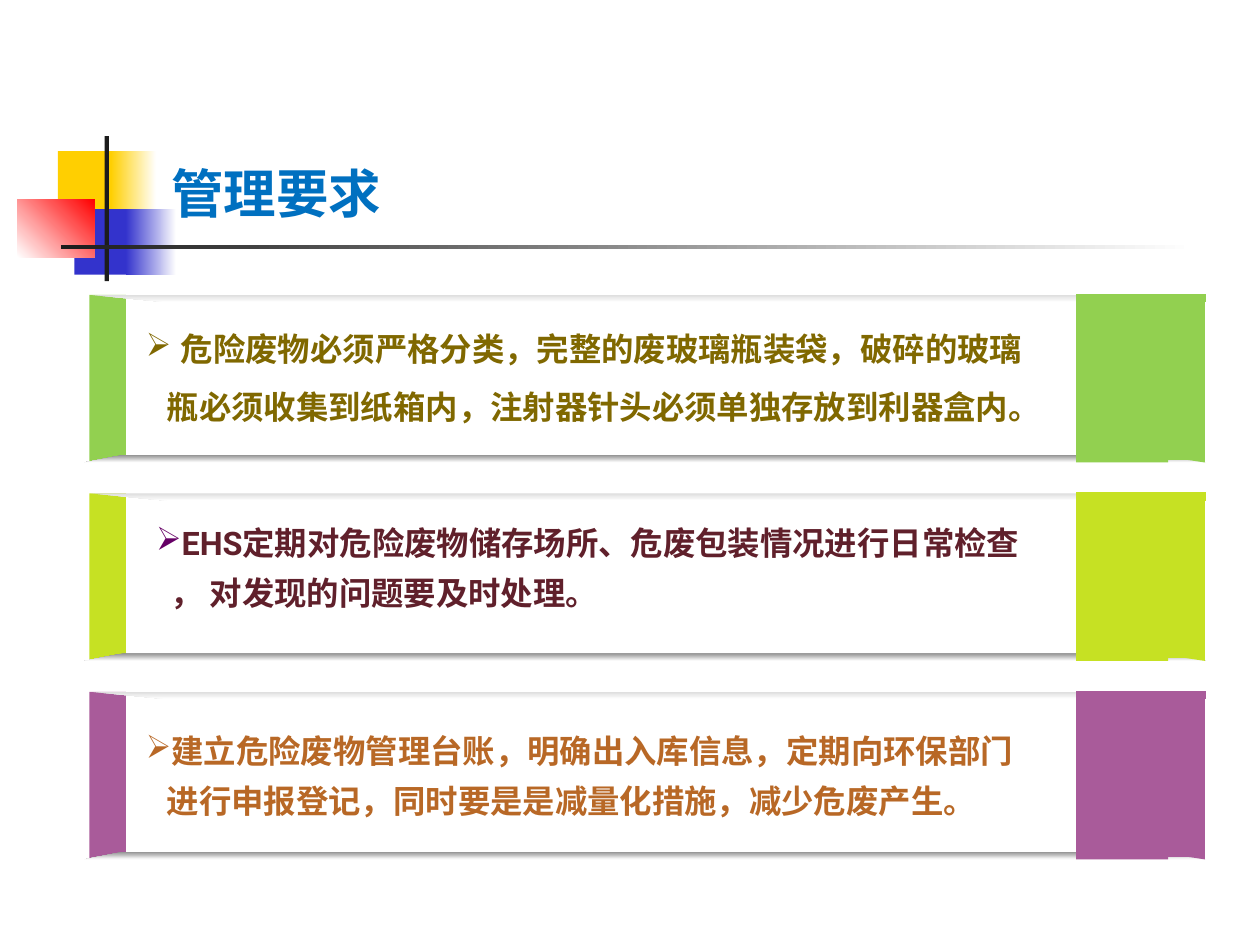
"""Build the slide of management requirements for hazardous waste."""
from lxml.etree import SubElement
from pptx import Presentation
from pptx.dml.color import RGBColor
from pptx.enum.shapes import MSO_SHAPE as Shape
from pptx.enum.text import MSO_ANCHOR as Anchor
from pptx.oxml.ns import qn
from pptx.util import Pt

WHITE = RGBColor(0xFF, 0xFF, 0xFF)
BLACK = RGBColor(0x1C, 0x1C, 0x1C)
YELLOW = RGBColor(0xFF, 0xCF, 0x01)
BLUE = RGBColor(0x33, 0x33, 0xCC)
RED = RGBColor(0xFF, 0x00, 0x00)
TITLE_BLUE = RGBColor(0x00, 0x70, 0xC0)
LIGHT_GREY = RGBColor(0xDD, 0xDD, 0xDD)
GREY = RGBColor(0x8E, 0x8E, 0x8E)
GREEN = RGBColor(0x92, 0xD0, 0x50)
LIME = RGBColor(0xC6, 0xE1, 0x23)
PURPLE = RGBColor(0xA9, 0x5B, 0x9A)
OLIVE = RGBColor(0x80, 0x68, 0x00)
MAROON = RGBColor(0x60, 0x20, 0x2B)
ORANGE = RGBColor(0xB8, 0x68, 0x26)
VIOLET = RGBColor(0x66, 0x00, 0x66)

FIRST_TOP, PITCH = 168.5, 113.4

CARDS = [
    dict(colour=GREEN, panel_top=168.5, text_at=(76.3, 167.8, 532.8, 85),
         lines=["危险废物必须严格分类，完整的废玻璃瓶装袋，破碎的玻璃",
                "瓶必须收集到纸箱内，注射器针头必须单独存放到利器盒内。"],
         style=dict(colour=OLIVE, spacing=1.5, hang=20, indent=12)),
    dict(colour=LIME, panel_top=275.8, text_at=(82.1, 287.3, 532.8, 67.7),
         lines=["EHS定期对危险废物储存场所、危废包装情况进行日常检查",
                "， 对发现的问题要及时处理。"],
         style=dict(colour=MAROON, spacing=1.3, indent=8, bullet_colour=VIOLET)),
    dict(colour=PURPLE, panel_top=388.8, text_at=(76.3, 406.1, 532.8, 67.7),
         lines=["建立危险废物管理台账，明确出入库信息，定期向环保部门",
                "进行申报登记，同时要是是减量化措施，减少危废产生。"],
         style=dict(colour=ORANGE, spacing=1.3, indent=12)),
]


def add_bullet(para, colour=None, hang=0):
    """Give a paragraph an arrow bullet."""
    props = para._p.get_or_add_pPr()
    props.set("marL", str(Pt(hang)))
    props.set("indent", str(-Pt(hang)))
    if colour is not None:
        holder = SubElement(props, qn("a:buClr"))
        SubElement(holder, qn("a:srgbClr")).set("val", str(colour))
    SubElement(props, qn("a:buChar")).set("char", "➢")


def write(para, text, *, font, size, colour, spacing=None):
    """Add bold text to a paragraph."""
    if spacing:
        para.line_spacing = spacing
    span = para.add_run()
    span.text = text
    span.font.name = font
    span.font.size = Pt(size)
    span.font.bold = True
    span.font.color.rgb = colour


class Painter:
    """Holds the text style and the current page."""

    def __init__(self, page, font="Roboto", title_size=30, body_size=18.5):
        self.page = page
        self.font = font
        self.title_size = title_size
        self.body_size = body_size

    def paint(self, shape, start, end=None, angle=0):
        """Fill a shape with one colour or a clockwise gradient."""
        shape.shadow.inherit = False
        shape.line.fill.background()
        if end is None:
            shape.fill.solid()
            shape.fill.fore_color.rgb = start
            return
        shape.fill.gradient()
        shape.fill.gradient_angle = -angle % 360
        for stop, colour in zip(shape.fill.gradient_stops, (start, end)):
            stop.color.rgb = colour

    def rectangle(self, at, *colours, angle=0):
        """Draw a rectangle."""
        shape = self.page.shapes.add_shape(Shape.RECTANGLE, *map(Pt, at))
        self.paint(shape, *colours, angle=angle)

    def polygon(self, top, points, *colours, angle=0):
        """Draw a closed outline whose heights are counted from top."""
        corners = [(Pt(x), Pt(top + y)) for x, y in points]
        builder = self.page.shapes.build_freeform(*corners[0], scale=1.0)
        builder.add_line_segments(corners[1:], close=True)
        self.paint(builder.convert_to_shape(), *colours, angle=angle)

    def text_box(self, at, anchor):
        """Add an empty wrapping text box and return its frame."""
        frame = self.page.shapes.add_textbox(*map(Pt, at)).text_frame
        frame.word_wrap = True
        frame.vertical_anchor = anchor
        return frame

    def title(self, text, at):
        """Write the slide title."""
        frame = self.text_box(at, Anchor.BOTTOM)
        write(frame.paragraphs[0], text, font=self.font,
              size=self.title_size, colour=TITLE_BLUE)

    def statement(self, at, lines, *, colour, spacing, indent,
                  hang=0, bullet_colour=None):
        """Write a bulleted line and its indented second line."""
        frame = self.text_box(at, Anchor.MIDDLE)
        first, second = frame.paragraphs[0], frame.add_paragraph()
        add_bullet(first, bullet_colour, hang)
        second._p.get_or_add_pPr().set("marL", str(Pt(indent)))
        for para, text in zip((first, second), lines):
            write(para, text, font=self.font, size=self.body_size,
                  colour=colour, spacing=spacing)

    def card(self, top, colour, panel_top, text_at, lines, style):
        """Draw one requirement card."""
        self.rectangle((48.2, panel_top, 630, 93.6), WHITE)
        self.rectangle((51.1, top, 20.9, 95), colour)
        self.polygon(top, [(51.8, 0), (95.8, 4.3), (641.5, 4.3), (685.4, 0)],
                     LIGHT_GREY, WHITE, angle=90)
        self.polygon(top, [(48.2, 95.8), (70.6, 91.4), (666, 91.4), (689, 95.8)],
                     GREY, WHITE, angle=90)
        self.rectangle((614.9, top, 52.6, 95.8), colour)
        self.polygon(top, [(614.9, -0.7), (614.9, 4.3), (689, 4.3), (689, -0.7)], colour)
        self.polygon(top, [(614.9, 89.3), (614.9, 94.3), (682.6, 94.3), (682.6, 89.3)], colour)
        self.polygon(top, [(688.5, 95.8), (667.4, 92.6), (667.4, 3.6), (688.5, 0.5)], colour)
        self.statement(text_at, lines, **style)

    def emblem(self):
        """Draw the coloured blocks and the crossing bars."""
        self.rectangle((33.1, 86.4, 34.6, 37.4), YELLOW)
        self.rectangle((63.4, 86.4, 25.9, 37.4), YELLOW, WHITE)
        self.rectangle((42.5, 119.5, 33.1, 37.4), BLUE)
        self.rectangle((72, 119.5, 28.8, 37.4), BLUE, WHITE)
        self.rectangle((10, 113.8, 44, 33.1), WHITE, RED, angle=315)
        self.rectangle((59.8, 77.8, 2.5, 82.8), BLACK)
        self.rectangle((34.6, 140.1, 648, 2.5), BLACK, WHITE)


def main():
    """Build and save the deck."""
    deck = Presentation()
    deck.slide_width, deck.slide_height = Pt(720), Pt(540)
    painter = Painter(deck.slides.add_slide(deck.slide_layouts[6]))
    painter.emblem()
    painter.title("管理要求", (90.7, 88.6, 613.4, 43.2))
    for row, card in enumerate(CARDS):
        painter.card(FIRST_TOP + row * PITCH, **card)
    deck.save("out.pptx")


if __name__ == "__main__":
    main()
